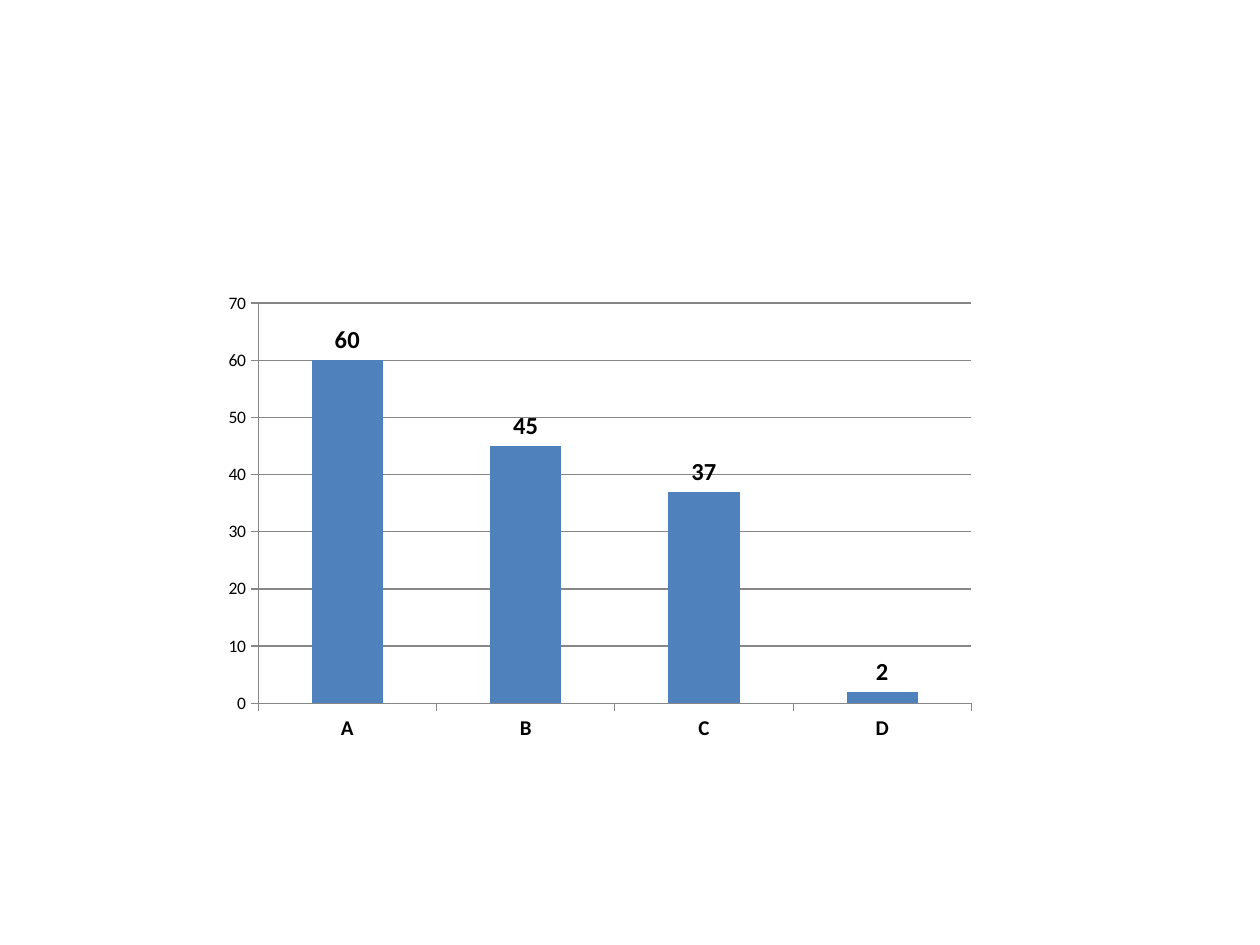
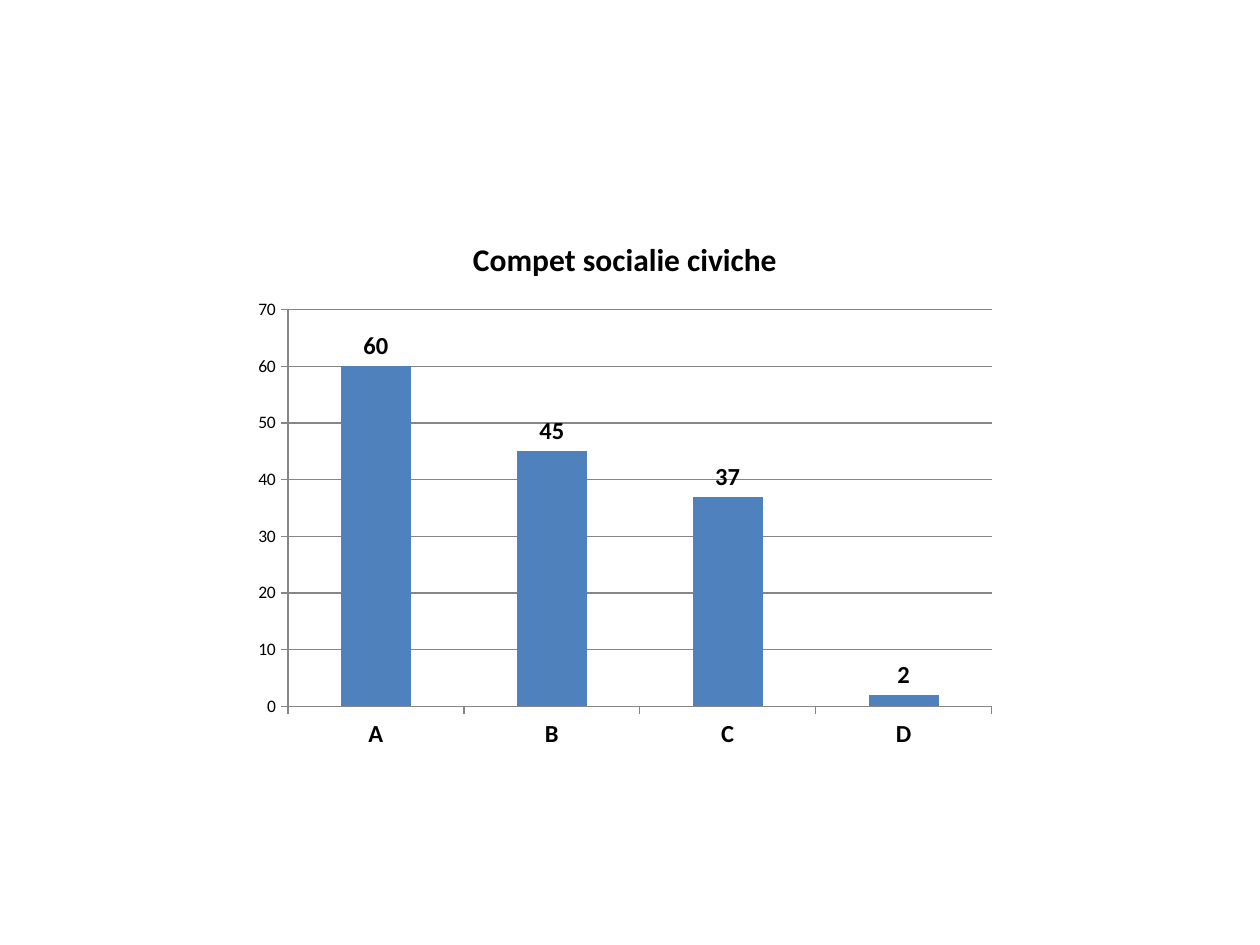
from dataclasses import dataclass
from typing import Any

from pptx import Presentation
from pptx import util as u
from pptx.chart.data import CategoryChartData
from pptx.dml.color import RGBColor
from pptx.enum import chart as ch

PX_PER_INCH = 126


@dataclass(frozen=True)
class Theme:
    font: str = "Calibri"
    ink: str = "000000"
    bar: str = "4F81BD"
    rule: str = "868686"
    rule_width: float = 0.75
    scale_size: int = 10
    score_size: int = 14
    heading_size: int = 18


@dataclass(frozen=True)
class GradeChart:
    left: int
    top: int
    width: int
    height: int
    series: str
    grade_size: int
    heading: str = ""


THEME = Theme()
GRADES = ("A", "B", "C", "D")
PUPILS = (60, 45, 37, 2)
CIVICS = "Compet socialie civiche"
GRADE_CHARTS = (
    GradeChart(213, 284, 774, 466, "Series 1", grade_size=12),
    GradeChart(243, 214, 764, 546, CIVICS, grade_size=14, heading=CIVICS),
)


def px(length: int) -> u.Emu:
    return u.Emu(round(length * u.Inches(1) / PX_PER_INCH))


def apply(target: Any, values: dict[str, Any]) -> None:
    for name, value in values.items():
        setattr(target, name, value)


def style_font(font: Any, size: int, bold: bool = False) -> None:
    apply(font, {"name": THEME.font, "size": u.Pt(size), "bold": bold})
    font.color.rgb = RGBColor.from_string(THEME.ink)


def style_line(line: Any) -> None:
    line.width = u.Pt(THEME.rule_width)
    line.color.rgb = RGBColor.from_string(THEME.rule)


def style_axis(axis: Any, size: int, bold: bool, gridlines: bool) -> None:
    apply(axis, {
        "has_major_gridlines": gridlines,
        "major_tick_mark": ch.XL_TICK_MARK.OUTSIDE,
        "minor_tick_mark": ch.XL_TICK_MARK.NONE,
    })
    style_line(axis.format.line)
    if gridlines:
        style_line(axis.major_gridlines.format.line)
    style_font(axis.tick_labels.font, size, bold)


def draw_grades(slide: Any, grades: GradeChart) -> None:
    data = CategoryChartData()
    data.categories = GRADES
    data.add_series(grades.series, PUPILS)
    box = map(px, (grades.left, grades.top, grades.width, grades.height))
    chart = slide.shapes.add_chart(
        ch.XL_CHART_TYPE.COLUMN_CLUSTERED, *box, data).chart
    apply(chart, {"has_legend": False, "has_title": bool(grades.heading)})
    style_font(chart.font, THEME.scale_size)

    # Heading
    if grades.heading:
        heading = chart.chart_title.text_frame
        heading.text = grades.heading
        style_font(heading.paragraphs[0].runs[0].font, THEME.heading_size, True)

    # Axes
    style_axis(chart.category_axis, grades.grade_size, bold=True, gridlines=False)
    style_axis(chart.value_axis, THEME.scale_size, bold=False, gridlines=True)
    apply(chart.value_axis,
          {"minimum_scale": 0, "maximum_scale": 70, "major_unit": 10})

    # Bars and their scores
    bars = chart.plots[0]
    apply(bars, {"gap_width": 150, "vary_by_categories": False,
                 "has_data_labels": True})
    fill = bars.series[0].format.fill
    fill.solid()
    fill.fore_color.rgb = RGBColor.from_string(THEME.bar)
    scores = bars.data_labels
    apply(scores, {"show_value": True,
                   "position": ch.XL_LABEL_POSITION.OUTSIDE_END})
    style_font(scores.font, THEME.score_size, True)


def main() -> None:
    deck = Presentation()
    apply(deck, {"slide_width": u.Inches(10), "slide_height": u.Inches(7.5)})
    blank = deck.slide_layouts[6]
    for grades in GRADE_CHARTS:
        draw_grades(deck.slides.add_slide(blank), grades)
    deck.save("out.pptx")


if __name__ == "__main__":
    main()
